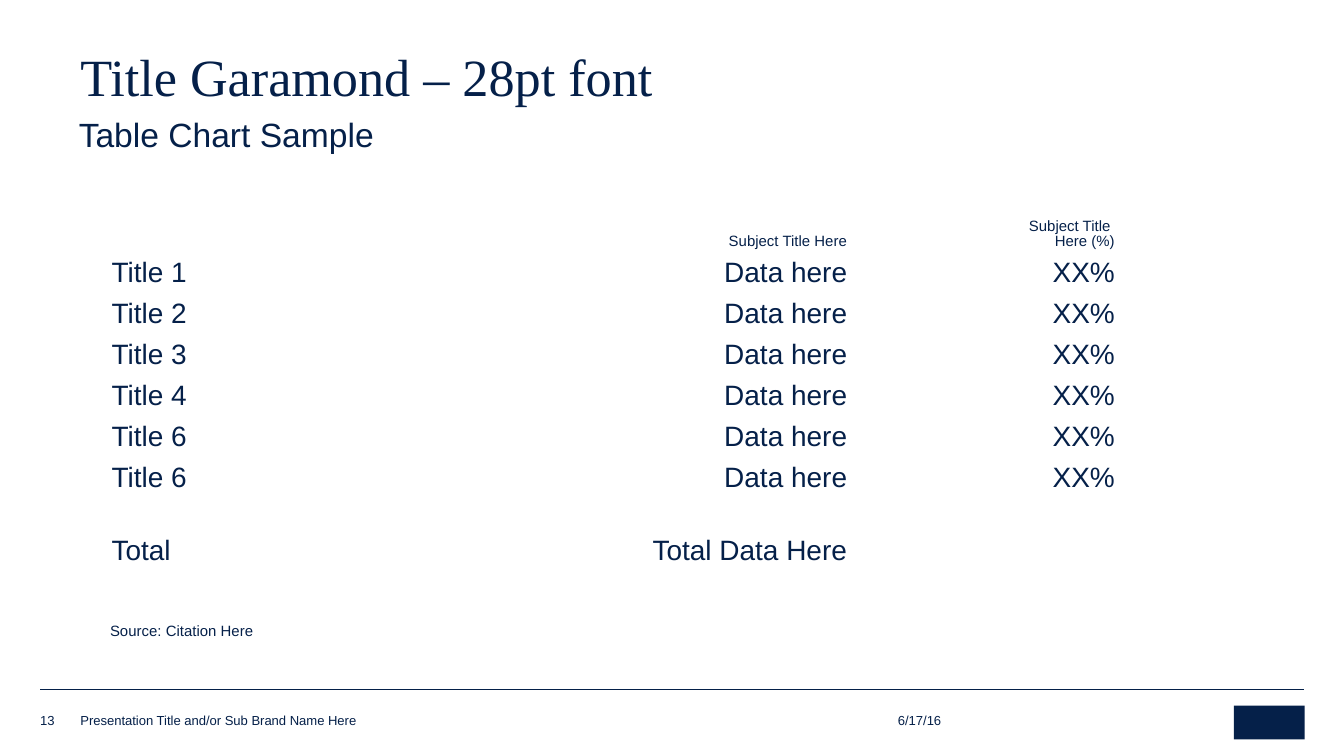
from dataclasses import dataclass

import pptx
import pptx.dml.color
import pptx.enum.shapes
import pptx.enum.text
import pptx.oxml
import pptx.util

Cm = pptx.util.Cm
Pt = pptx.util.Pt
Anchor = pptx.enum.text.MSO_ANCHOR
Align = pptx.enum.text.PP_ALIGN


@dataclass(frozen=True)
class Theme:
    navy = pptx.dml.color.RGBColor.from_string("052049")
    heading_font = "Times New Roman"
    body_font = "Arial"
    title_size = 28
    subtitle_size = 18
    data_size = 15
    small_size = 8
    footer_size = 7
    rule_width = 0.25


THEME = Theme()


def set_text(text_frame, text, size, font=THEME.body_font, spacing=1.0, align=Align.LEFT):
    text_frame.text = text
    paragraph = text_frame.paragraphs[0]
    paragraph.line_spacing = spacing
    paragraph.alignment = align
    for run in paragraph.runs:
        run.font.size = Pt(size)
        run.font.name = font
        run.font.color.rgb = THEME.navy
    if not text:
        # An empty cell keeps its row low only if its end mark is small too.
        paragraph._p.get_or_add_endParaRPr().set("sz", str(size * 100))


def add_text(slide, box, text, size, inset=(0, 0), anchor=Anchor.TOP, **style):
    """Add a text box; box is left, top, width, height and inset is x, y, in cm."""
    text_frame = slide.shapes.add_textbox(*map(Cm, box)).text_frame
    text_frame.word_wrap = True
    text_frame.vertical_anchor = anchor
    text_frame.margin_left = text_frame.margin_right = Cm(inset[0])
    text_frame.margin_top = text_frame.margin_bottom = Cm(inset[1])
    set_text(text_frame, text, size, **style)


def add_data_table(slide):
    titles = ["Title 1", "Title 2", "Title 3", "Title 4", "Title 6", "Title 6"]
    rows = [
        ["", "Subject Title Here", "Subject Title \vHere (%)"],
        *[[title, "Data here", "XX%"] for title in titles],
        ["Total", "Total Data Here", ""],
    ]
    widths = [7.7, 6.7, 5.06]
    heights = [0.76] * (len(rows) - 1) + [1.35]
    frame = slide.shapes.add_table(
        len(rows), len(widths), Cm(1.86), Cm(4.01), Cm(sum(widths)), Cm(sum(heights)))
    table = frame.table
    table.first_row = False
    table.horz_banding = False
    for column, width in zip(table.columns, widths):
        column.width = Cm(width)
    for row, height in zip(table.rows, heights):
        row.height = Cm(height)
    for row_index, row in enumerate(rows):
        is_edge = row_index in (0, len(rows) - 1)
        size = THEME.small_size if row_index == 0 else THEME.data_size
        for column_index, text in enumerate(row):
            cell = table.cell(row_index, column_index)
            cell.fill.background()
            cell.margin_left = cell.margin_right = Cm(0.25)
            cell.margin_top = cell.margin_bottom = Cm(0.1)
            cell.vertical_anchor = Anchor.BOTTOM if is_edge else Anchor.TOP
            set_text(cell.text_frame, text, size, spacing=0.9,
                     align=Align.RIGHT if column_index else Align.LEFT)


def add_footer_rule(slide):
    rule = slide.shapes.add_connector(
        pptx.enum.shapes.MSO_CONNECTOR.STRAIGHT, Cm(0.76), Cm(13.03), Cm(24.64), Cm(13.03))
    rule.line.color.rgb = THEME.navy
    rule.line.width = Pt(THEME.rule_width)
    rule._element.spPr.append(pptx.oxml.parse_xml(
        '<a:effectLst xmlns:a="http://schemas.openxmlformats.org/drawingml/2006/main"/>'))


def add_logo_block(slide):
    block = slide.shapes.add_shape(
        pptx.enum.shapes.MSO_SHAPE.RECTANGLE, Cm(23.32), Cm(13.34), Cm(1.34), Cm(0.64))
    block.shadow.inherit = False
    block.fill.solid()
    block.fill.fore_color.rgb = THEME.navy
    block.line.fill.background()


def add_footer(slide):
    add_footer_rule(slide)
    add_logo_block(slide)
    items = [
        (0.76, 0.69, "13"),
        (1.52, 11.96, "Presentation Title and/or Sub Brand Name Here"),
        (16.97, 2.57, "6/17/16"),
    ]
    for left, width, text in items:
        add_text(slide, (left, 13.44, width, 0.33), text, THEME.footer_size,
                 anchor=Anchor.BOTTOM)


def main():
    presentation = pptx.Presentation()
    presentation.slide_width = Cm(25.4)
    presentation.slide_height = Cm(14.29)
    slide = presentation.slides.add_slide(presentation.slide_layouts[6])

    add_footer(slide)
    add_text(slide, (1.27, 0.89, 22.45, 1.57), "Title Garamond – 28pt font",
             THEME.title_size, inset=(0.25, 0.13), font=THEME.heading_font, spacing=0.85)
    add_text(slide, (1.24, 2.11, 22.43, 0.79), "Table Chart Sample",
             THEME.subtitle_size, inset=(0.25, 0.13), spacing=0.9)
    add_data_table(slide)
    add_text(slide, (2.08, 11.79, 4.22, 0.3), "Source: Citation Here",
             THEME.small_size, spacing=0.9)

    presentation.save("out.pptx")


if __name__ == "__main__":
    main()
